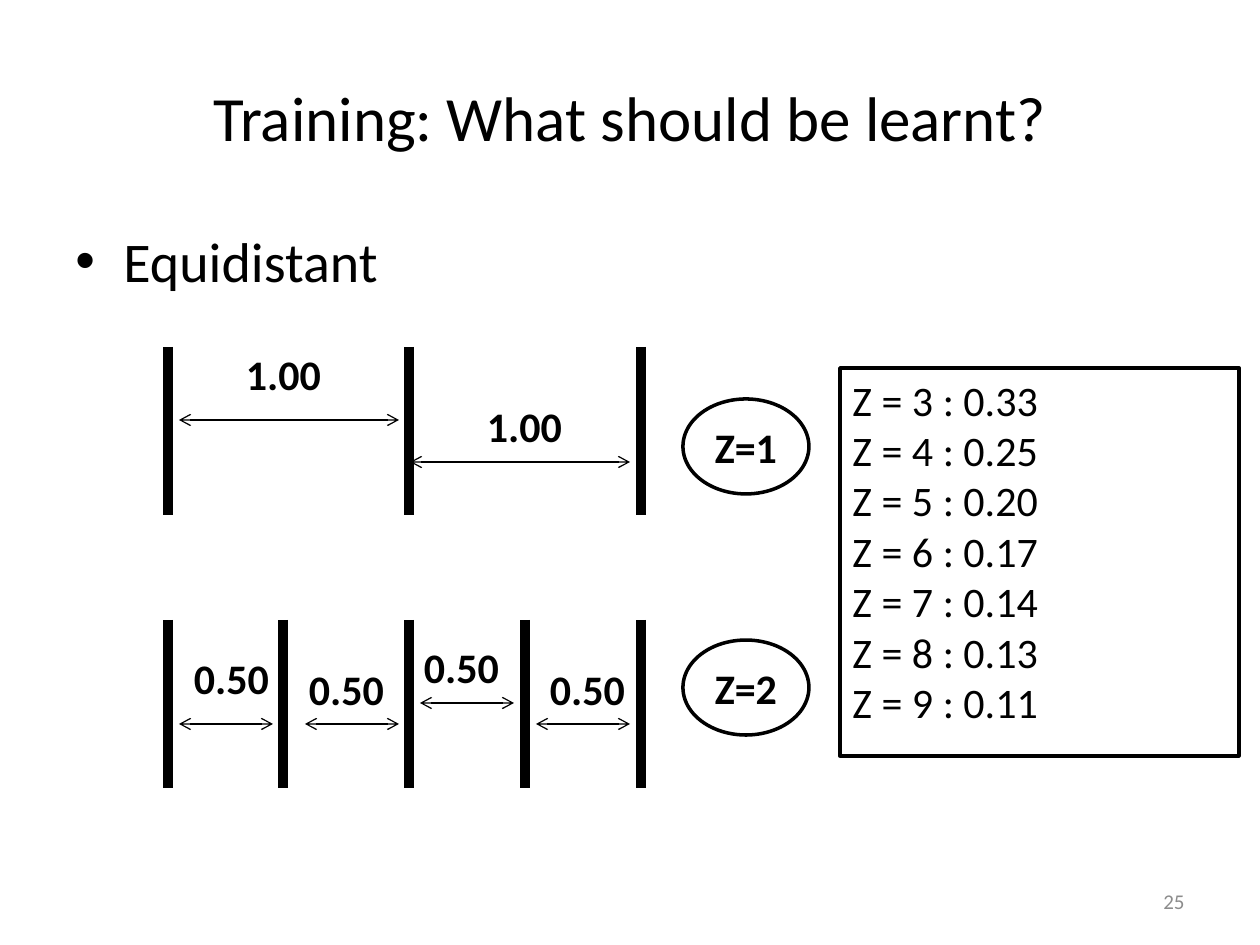
from pptx import Presentation
from pptx.dml.color import RGBColor
from pptx.enum.shapes import MSO_CONNECTOR, MSO_SHAPE
from pptx.enum.text import MSO_ANCHOR, PP_ALIGN
from pptx.oxml.ns import qn
from pptx.util import Emu, Pt
from lxml import etree

STRAIGHT = MSO_CONNECTOR.STRAIGHT
OVAL, RECTANGLE = MSO_SHAPE.OVAL, MSO_SHAPE.RECTANGLE
TOP, MIDDLE = MSO_ANCHOR.TOP, MSO_ANCHOR.MIDDLE
LEFT, CENTER, RIGHT = PP_ALIGN.LEFT, PP_ALIGN.CENTER, PP_ALIGN.RIGHT

PX_PER_INCH = 126
COLORS = {"ink": "000000", "page_number": "8C8C8C"}
FONT = "Calibri"
BAR_HEIGHT = 168
LABEL_SIZE = (147, 53)
BADGE_SIZE = (126, 95)
BADGE_LEFT = 683

BAR_ROWS = [(347, (168, 409, 641)), (620, (168, 283, 409, 525, 641))]
GAPS = [
    (179, 399, 420, "1.00", 210, 347),
    (410, 630, 462, "1.00", 451, 399),
    (179, 273, 724, "0.50", 158, 651),
    (305, 399, 724, "0.50", 273, 662),
    (420, 514, 703, "0.50", 388, 640),
    (536, 630, 724, "0.50", 514, 662),
]
BADGES = [("Z=1", 399), ("Z=2", 640)]
SPACINGS = ["0.33", "0.25", "0.20", "0.17", "0.14", "0.13", "0.11"]


def px(length):
    """Turn pixels into EMU."""
    return Emu(round(length * 914400 / PX_PER_INCH))


def color(name):
    """Look up a colour by its role."""
    return RGBColor.from_string(COLORS[name])


def write(frame, text, size=24, bold=False, ink="ink", align=LEFT, anchor=TOP):
    """Fill a text frame with one paragraph per line of text."""
    frame.word_wrap = True
    frame.vertical_anchor = anchor
    frame.text = text
    for paragraph in frame.paragraphs:
        paragraph.alignment = align
        font = paragraph.runs[0].font
        font.name, font.size, font.bold = FONT, Pt(size), bold
        font.color.rgb = color(ink)


def add_text(slide, box, text, **style):
    """Add a text box and return its frame."""
    frame = slide.shapes.add_textbox(*map(px, box)).text_frame
    write(frame, text, **style)
    return frame


def add_outline(slide, preset, box, text, **style):
    """Add an unfilled outlined shape with text."""
    outline = slide.shapes.add_shape(preset, *map(px, box))
    outline.shadow.inherit = False
    outline.fill.background()
    outline.line.color.rgb = color("ink")
    outline.line.width = Pt(2)
    write(outline.text_frame, text, **style)


def add_line(slide, start, end, width, arrows=False):
    """Add a straight line, optionally with open arrowheads at both ends."""
    line = slide.shapes.add_connector(STRAIGHT, *map(px, start + end))
    line.line.color.rgb = color("ink")
    line.line.width = Pt(width)
    etree.SubElement(line._element.spPr, qn("a:effectLst"))
    if arrows:
        for end_tag in ("a:headEnd", "a:tailEnd"):
            etree.SubElement(line.line._get_or_add_ln(), qn(end_tag), type="arrow")


def add_bullet(paragraph, indent):
    """Give a paragraph a round bullet and a hanging indent."""
    properties = paragraph._p.get_or_add_pPr()
    properties.set("marL", str(px(indent)))
    properties.set("indent", str(-px(indent)))
    etree.SubElement(properties, qn("a:buFont"), typeface="Arial")
    etree.SubElement(properties, qn("a:buChar"), char="•")


def main():
    """Build the slide and save it."""
    deck = Presentation()
    deck.slide_width, deck.slide_height = px(1260), px(945)
    slide = deck.slides.add_slide(deck.slide_layouts[6])

    add_text(slide, (63, 38, 1134, 157), "Training: What should be learnt?",
             size=36, align=CENTER, anchor=MIDDLE)
    topic = add_text(slide, (63, 220, 1134, 624), "Equidistant", size=32)
    add_bullet(topic.paragraphs[0], 48)

    for top, bars in BAR_ROWS:
        for x in bars:
            add_line(slide, (x, top), (x, top + BAR_HEIGHT), 6)
    for start, end, y, distance, left, top in GAPS:
        add_line(slide, (start, y), (end, y), 0.75, arrows=True)
        add_text(slide, (left, top, *LABEL_SIZE), distance,
                 bold=True, align=CENTER, anchor=MIDDLE)
    for name, top in BADGES:
        add_outline(slide, OVAL, (BADGE_LEFT, top, *BADGE_SIZE), name,
                    bold=True, align=CENTER, anchor=MIDDLE)

    rows = [f"Z = {z} : {value}" for z, value in enumerate(SPACINGS, start=3)]
    add_outline(slide, RECTANGLE, (840, 368, 399, 388), "\n".join(rows))
    add_text(slide, (903, 876, 294, 50), "25", size=12, ink="page_number",
             align=RIGHT, anchor=MIDDLE)
    deck.save("out.pptx")


if __name__ == "__main__":
    main()
